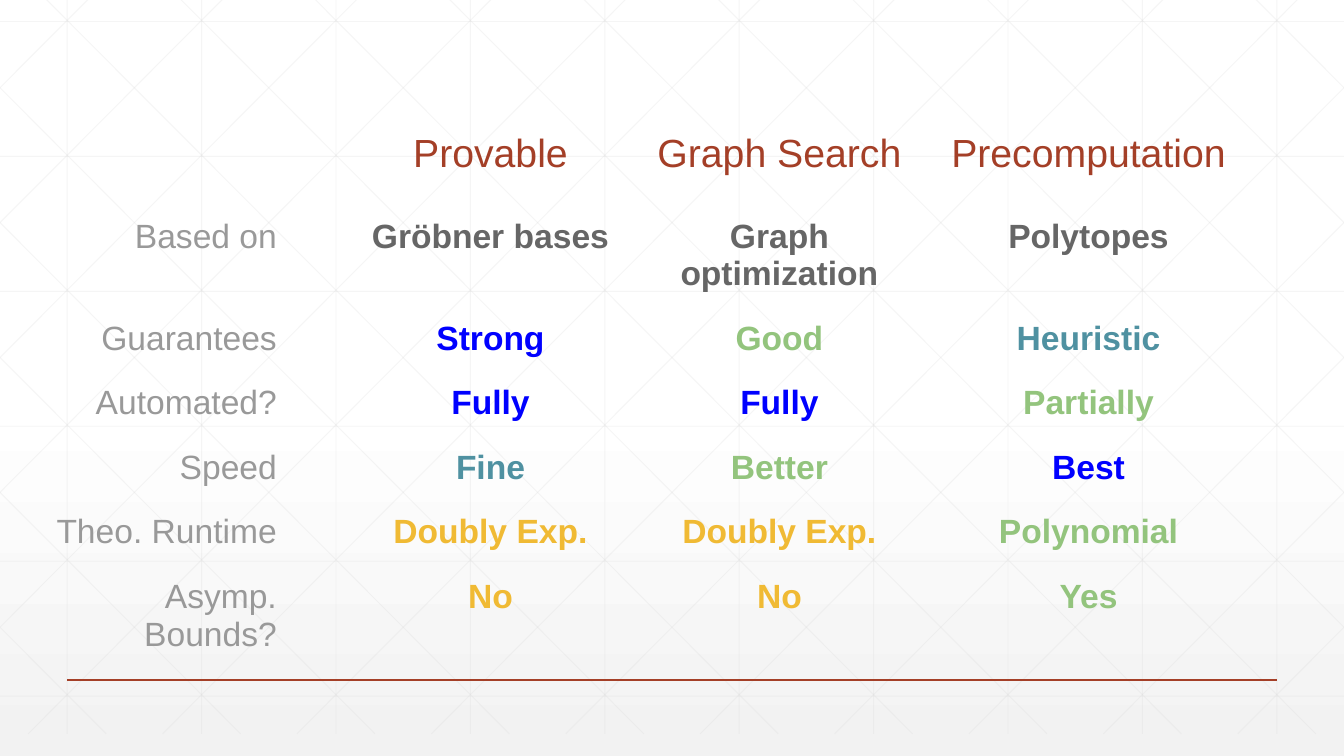
"""Build a slide that compares three approaches in a table over a faint grid."""
from typing import NamedTuple

from pptx import Presentation
from pptx.dml.color import RGBColor
from pptx.enum.dml import MSO_LINE
from pptx.enum.shapes import MSO_CONNECTOR
from pptx.enum.text import PP_ALIGN
from pptx.oxml import parse_xml
from pptx.oxml.ns import nsdecls, qn
from pptx.util import Inches, Pt

WIDE = 10
HIGH = WIDE * 9 / 16
TOP, LOW = -0.16, 5.46
SLANT = 5.6
FONT = "Arial"
NO_STYLE = "{2D5ABB26-0587-4C30-8999-92F81FD0307C}"
HUES = {
    "grid": "D9D9D9", "rust": "A43F27", "label": "999999", "text": "666666",
    "blue": "0000FF", "green": "93C47D", "teal": "4F91A1", "gold": "F0BA34",
    "white": "FFFFFF", "mist": "F2F2F2",
}


class Line(NamedTuple):
    x: float
    y: float
    to_x: float
    to_y: float
    hue: str = "grid"
    size: float = 0.5
    alpha: int = 25


class Entry(NamedTuple):
    text: str
    hue: str
    size: int = 18
    bold: bool = True
    align: PP_ALIGN = PP_ALIGN.CENTER


class Row(NamedTuple):
    label: str
    high: float
    items: tuple[tuple[str, str], ...]


COLS = (2.01, 0.48, 2.02, 2.28, 2.32)
HEADS = ("Provable", "Graph Search", "Precomputation")
ROWS = (
    Row("Based on", 0.3, (("Gröbner bases", "text"), ("Graph optimization", "text"), ("Polytopes", "text"))),
    Row("Guarantees", 0.47, (("Strong", "blue"), ("Good", "green"), ("Heuristic", "teal"))),
    Row("Automated?", 0.46, (("Fully", "blue"), ("Fully", "blue"), ("Partially", "green"))),
    Row("Speed", 0.43, (("Fine", "teal"), ("Better", "green"), ("Best", "blue"))),
    Row("Theo. Runtime", 0.46, (("Doubly Exp.", "gold"), ("Doubly Exp.", "gold"), ("Polynomial", "green"))),
    Row("Asymp. Bounds?", 0.95, (("No", "gold"), ("No", "gold"), ("Yes", "green"))),
)


def shade(slide) -> None:
    slide.background.fill.solid()
    stops = "".join(
        f'<a:gs pos="{pos * 1000}"><a:srgbClr val="{HUES[hue]}">'
        f'<a:alpha val="{alpha * 1000}"/></a:srgbClr></a:gs>'
        for pos, hue, alpha in ((0, "white", 100), (53, "white", 100), (100, "mist", 65))
    )
    fade = parse_xml(
        f'<a:gradFill {nsdecls("a")} rotWithShape="1"><a:gsLst>{stops}</a:gsLst>'
        '<a:lin ang="5400000" scaled="0"/></a:gradFill>'
    )
    solid = next(slide.background.fill._xPr.iter(qn("a:solidFill")))
    solid.getparent().replace(solid, fade)


def draw(slide, line: Line) -> None:
    ends = [Inches(val) for val in line[:4]]
    shape = slide.shapes.add_connector(MSO_CONNECTOR.STRAIGHT, *ends)
    shape.line.width = Pt(line.size)
    shape.line.color.rgb = RGBColor.from_string(HUES[line.hue])
    shape.line.dash_style = MSO_LINE.SOLID
    props = shape._element.spPr
    if line.alpha < 100:
        color = next(props.iter(qn("a:srgbClr")))
        color.append(parse_xml(f'<a:alpha {nsdecls("a")} val="{line.alpha * 1000}"/>'))
    props.append(parse_xml(f'<a:effectLst {nsdecls("a")}/>'))
    shape._element.remove(shape._element.find(qn("p:style")))


def mesh() -> list[Line]:
    lines = [Line(0.5 + col, TOP, 0.5 + col, LOW) for col in range(10)]
    lines += [Line(0, 0.16 + row * 1.004, WIDE, 0.16 + row * 1.004) for row in range(6)]
    steep = (LOW - TOP) / SLANT
    for col in range(-5, 10):
        root = 0.19 + col
        left, right = max(0, root), min(WIDE, root + SLANT)
        high, low = (TOP + (x - root) * steep for x in (left, right))
        lines.append(Line(left, high, right, low))
        lines.append(Line(WIDE - left, high, WIDE - right, low))
    return lines


def write(cell, entry: Entry) -> None:
    para = cell.text_frame.paragraphs[0]
    para.alignment = entry.align
    run = para.add_run()
    run.text = entry.text
    run.font.name = FONT
    run.font.size = Pt(entry.size)
    run.font.bold = entry.bold
    run.font.color.rgb = RGBColor.from_string(HUES[entry.hue])


def clear(cell) -> None:
    mark = f'<a:endParaRPr {nsdecls("a")} sz="1400"><a:latin typeface="{FONT}"/></a:endParaRPr>'
    cell.text_frame.paragraphs[0]._p.append(parse_xml(mark))


def build(slide) -> None:
    highs = [0.64, *(row.high for row in ROWS)]
    frame = slide.shapes.add_table(
        len(highs), len(COLS), Inches(0.15), Inches(0.88), Inches(sum(COLS)), Inches(sum(highs))
    )
    table = frame.table
    table.first_row = table.horz_banding = False
    next(table._tbl.iter(qn("a:tableStyleId"))).text = NO_STYLE
    for col, wide in zip(table.columns, COLS):
        col.width = Inches(wide)
    for row, high in zip(table.rows, highs):
        row.height = Inches(high)
    for cell in table.iter_cells():
        cell.fill.background()
        cell.margin_left = cell.margin_right = Inches(0.1)
        cell.margin_top = cell.margin_bottom = Inches(0.1)
    clear(table.cell(0, 0))
    for at in range(len(highs)):
        clear(table.cell(at, 1))
    for col, head in enumerate(HEADS, 2):
        write(table.cell(0, col), Entry(head, "rust", 21, False))
    for at, row in enumerate(ROWS, 1):
        write(table.cell(at, 0), Entry(row.label, "label", bold=False, align=PP_ALIGN.RIGHT))
        for col, (text, hue) in enumerate(row.items, 2):
            write(table.cell(at, col), Entry(text, hue))


def main() -> None:
    deck = Presentation()
    deck.slide_width, deck.slide_height = Inches(WIDE), Inches(HIGH)
    slide = deck.slides.add_slide(deck.slide_layouts[6])
    shade(slide)
    for line in mesh():
        draw(slide, line)
    draw(slide, Line(WIDE * 0.05, HIGH * 0.9, WIDE * 0.95, HIGH * 0.9, "rust", 1, 100))
    build(slide)
    deck.save("out.pptx")


if __name__ == "__main__":
    main()
